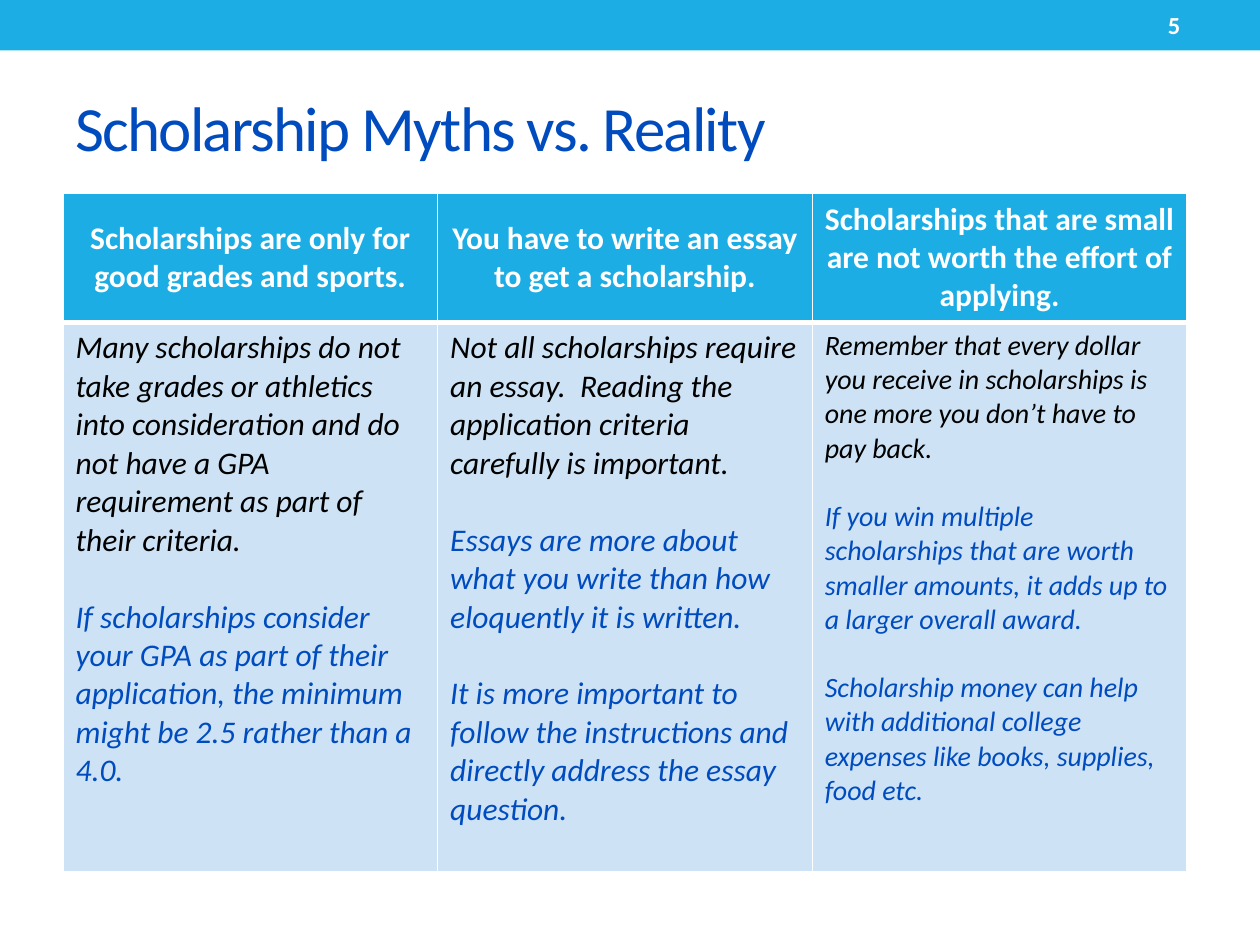
from dataclasses import dataclass

from lxml.etree import SubElement
from pptx import Presentation
from pptx.dml.color import RGBColor
from pptx.enum.shapes import MSO_SHAPE
from pptx.enum.text import MSO_ANCHOR, PP_ALIGN
from pptx.oxml.ns import qn
from pptx.util import Inches, Pt


@dataclass(frozen=True)
class Theme:
    font: str = "Calibri"
    accent: str = "1CADE4"
    blue: str = "004CBF"
    pale: str = "CDE3F5"
    black: str = "000000"
    white: str = "FFFFFF"
    title_size: int = 36
    number_size: int = 14
    header_size: int = 18
    line_height: float = 1.22


THEME = Theme()

# Each column: myth, body text size, reality paragraphs
MYTHS = [
    ("Scholarships are only for good grades and sports.", 18, [
        "Many scholarships do not take grades or athletics into consideration "
        "and do not have a GPA requirement as part of their criteria.",
        "If scholarships consider your GPA as part of their application, "
        "the minimum might be 2.5 rather than a 4.0.",
    ]),
    ("You have to write an essay to get a scholarship.", 18, [
        "Not all scholarships require an essay.  Reading the application "
        "criteria carefully is important.",
        "Essays are more about what you write than how eloquently it is written.",
        "It is more important to follow the instructions and directly address "
        "the essay question.",
    ]),
    ("Scholarships that are small are not worth the effort of applying.", 16, [
        "Remember that every dollar you receive in scholarships is one more "
        "you don’t have to pay back.",
        "If you win multiple scholarships that are worth smaller amounts, "
        "it adds up to a larger overall award.",
        "Scholarship money can help with additional college expenses like "
        "books, supplies, food etc.",
    ]),
]


def add_run(paragraph, text, size, color, bold=False, italic=False):
    run = paragraph.add_run()
    run.text = text
    font = run.font
    font.name = THEME.font
    font.size = Pt(size)
    font.bold = bold
    font.italic = italic
    font.color.rgb = RGBColor.from_string(color)
    return run


def add_text_box(slide, left, top, width, height):
    """Add a middle-anchored text box and return its first paragraph."""
    frame = slide.shapes.add_textbox(left, top, width, height).text_frame
    frame.word_wrap = True
    frame.vertical_anchor = MSO_ANCHOR.MIDDLE
    return frame.paragraphs[0]


def add_banner(slide, left, top, width, height, number):
    banner = slide.shapes.add_shape(MSO_SHAPE.RECTANGLE, left, top, width, height)
    banner.shadow.inherit = False
    banner.fill.solid()
    banner.fill.fore_color.rgb = RGBColor.from_string(THEME.accent)
    banner.line.fill.background()
    number_left = left + width - Inches(0.83)
    paragraph = add_text_box(slide, number_left, top + Inches(0.02),
                             Inches(0.33), height - Inches(0.04))
    add_run(paragraph, number, THEME.number_size, THEME.white, bold=True)


def add_title(slide, left, top, width, height, text):
    paragraph = add_text_box(slide, left, top, width, height)
    run = add_run(paragraph, text, THEME.title_size, THEME.blue)
    run.font._element.set("spc", "-100")


def style_cell(cell, fill, top_width=1, bottom_width=1):
    """Give a cell white borders, in points, and a solid fill."""
    properties = cell._tc.get_or_add_tcPr()
    widths = {"a:lnL": 1, "a:lnR": 1, "a:lnT": top_width, "a:lnB": bottom_width}
    for tag, width in widths.items():
        line = SubElement(properties, qn(tag), w=str(Pt(width)))
        SubElement(SubElement(line, qn("a:solidFill")), qn("a:srgbClr"), val=THEME.white)
    cell.fill.solid()
    cell.fill.fore_color.rgb = RGBColor.from_string(fill)


def fill_header(cell, text):
    style_cell(cell, THEME.accent, bottom_width=3)
    cell.vertical_anchor = MSO_ANCHOR.MIDDLE
    paragraph = cell.text_frame.paragraphs[0]
    paragraph.alignment = PP_ALIGN.CENTER
    add_run(paragraph, text, THEME.header_size, THEME.white, bold=True)


def fill_reality(cell, texts, size):
    """Write the first paragraph in black and the rest in blue, one line apart."""
    style_cell(cell, THEME.pale, top_width=3)
    frame = cell.text_frame
    for index, text in enumerate(texts):
        paragraph = frame.add_paragraph() if index else frame.paragraphs[0]
        if index:
            paragraph.space_before = Pt(round(size * THEME.line_height, 1))
        add_run(paragraph, text, size, THEME.blue if index else THEME.black, italic=True)


def add_myth_table(slide, left, top, width, height, myths):
    table = slide.shapes.add_table(2, len(myths), left, top, width, height).table
    header_height = Inches(1.03)
    table.rows[0].height = header_height
    table.rows[1].height = height - header_height
    for index, (myth, size, reality) in enumerate(myths):
        table.columns[index].width = width // len(myths)
        fill_header(table.cell(0, index), myth)
        fill_reality(table.cell(1, index), reality, size)


def main():
    presentation = Presentation()
    presentation.slide_width = Inches(10)
    presentation.slide_height = Inches(7.5)
    slide = presentation.slides.add_slide(presentation.slide_layouts[6])
    add_banner(slide, 0, 0, presentation.slide_width, Inches(0.4), "5")
    add_title(slide, Inches(0.5), 0, Inches(9), Inches(2), "Scholarship Myths vs. Reality")
    add_myth_table(slide, Inches(0.5), Inches(1.53), Inches(8.92), Inches(5.39), MYTHS)
    presentation.save("out.pptx")


if __name__ == "__main__":
    main()
